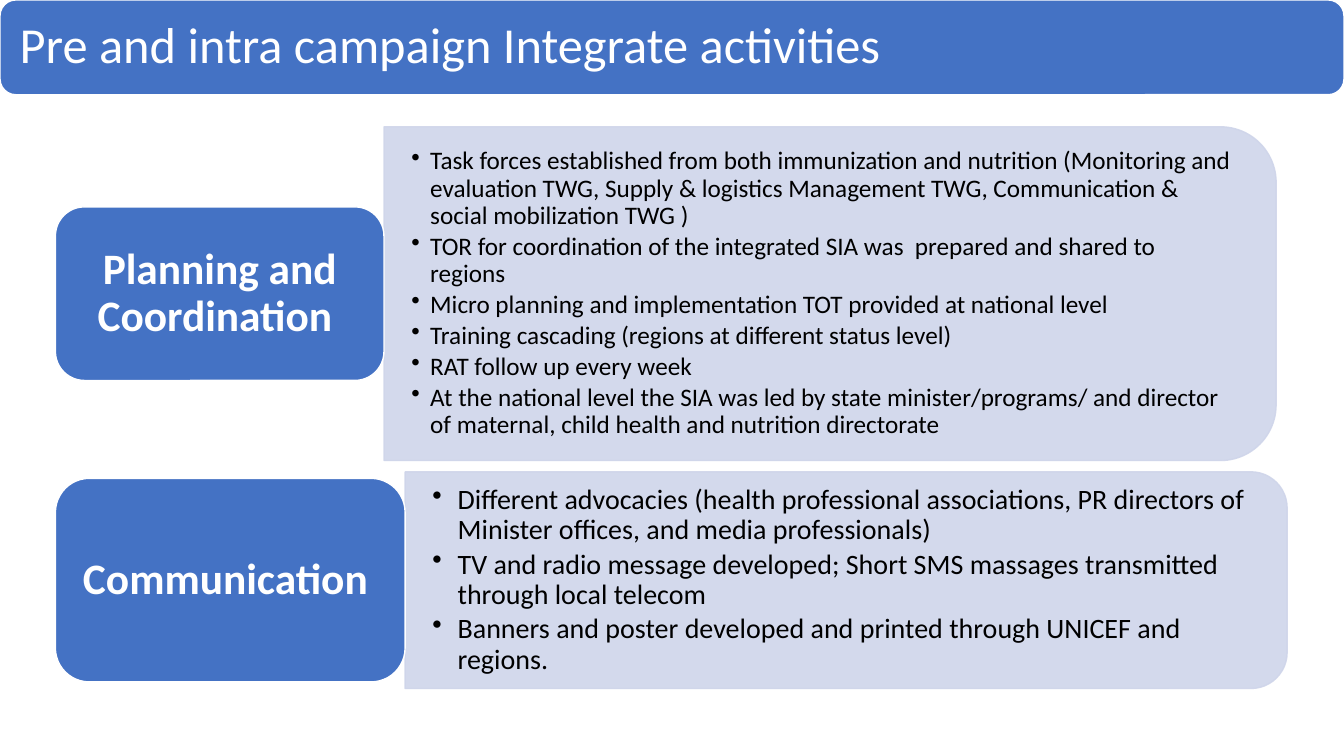
import pptx
import pptx.dml.color
import pptx.enum.shapes
import pptx.enum.text
import pptx.oxml.ns
import pptx.util
from lxml import etree

Pt = pptx.util.Pt
SHAPES = pptx.enum.shapes.MSO_SHAPE
ALIGN = pptx.enum.text.PP_ALIGN
COLORS = {"blue": "4472C4", "pale": "CFD5EA", "white": "FFFFFF", "black": "000000"}
FONT = "Calibri"
CORNER_INSET = 0.0488
LABEL_LEFT = 39.6

SECTIONS = [
    {
        "label": "Planning and Coordination ",
        "label_height": 124,
        "panel": (274.3, 90.6, 637.2, 238.4),
        "size": 18,
        "indent": 13.5,
        "items": [
            "Task forces established from both immunization and nutrition (Monitoring and evaluation TWG, "
            "Supply & logistics Management TWG, Communication & social mobilization TWG )",
            "TOR for coordination of the integrated SIA was  prepared and shared to regions",
            "Micro planning and implementation TOT provided at national level",
            "Training cascading (regions at different status level)",
            "RAT follow up every week",
            "At the national level the SIA was led by state minister/programs/ and director of maternal, "
            "child health and nutrition directorate",
        ],
    },
    {
        "label": "Communication ",
        "label_height": 145.4,
        "panel": (289.4, 337, 630, 154.8),
        "size": 20,
        "indent": 18,
        "items": [
            "Different advocacies (health professional associations, PR directors of Minister offices, "
            "and media professionals)",
            "TV and radio message developed; Short SMS massages transmitted through local telecom",
            "Banners and poster developed and printed through UNICEF and regions.",
        ],
    },
]


def rgb(name):
    """Return the named palette colour."""
    return pptx.dml.color.RGBColor.from_string(COLORS[name])


def write_text(shape, texts, size, color, margins, bold=False, align=ALIGN.LEFT, indent=0):
    """Fill a shape with paragraphs, bulleted when an indent is given."""
    frame = shape.text_frame
    frame.word_wrap = True
    frame.vertical_anchor = pptx.enum.text.MSO_ANCHOR.MIDDLE
    frame.margin_left = frame.margin_right = Pt(margins[0])
    frame.margin_top = frame.margin_bottom = Pt(margins[1])
    for index, text in enumerate(texts):
        paragraph = frame.paragraphs[0] if index == 0 else frame.add_paragraph()
        paragraph.text = text
        paragraph.alignment = align
        paragraph.line_spacing = 0.9
        if indent:
            paragraph.space_after = Pt(0.15 * size)
            properties = paragraph._p.get_or_add_pPr()
            properties.set("marL", str(Pt(indent)))
            properties.set("indent", str(-Pt(indent)))
            bullet = etree.SubElement(properties, pptx.oxml.ns.qn("a:buChar"))
            bullet.set("char", "•")
        font = paragraph.runs[0].font
        font.name, font.size, font.bold = FONT, Pt(size), bold
        font.color.rgb = rgb(color)


def add_block(slide, kind, box, fill, line):
    """Add a filled preset shape with a thin outline and no shadow."""
    shape = slide.shapes.add_shape(kind, *map(Pt, box))
    shape.shadow.inherit = False
    shape.fill.solid()
    shape.fill.fore_color.rgb = rgb(fill)
    shape.line.color.rgb = rgb(line)
    shape.line.width = Pt(1)
    return shape


def add_title(slide, box, text):
    """Add the title bar."""
    bar = add_block(slide, SHAPES.ROUNDED_RECTANGLE, box, "blue", "white")
    write_text(bar, [text], 36, "white", (10.8, 10.8))


def add_panel(slide, box, items, size, indent):
    """Add a translucent panel rounded on the right, with its bullet list."""
    left, top, width, height = box
    turned = (left + (width - height) / 2, top + (height - width) / 2, height, width)
    panel = add_block(slide, SHAPES.ROUND_2_SAME_RECTANGLE, turned, "pale", "pale")
    panel.rotation = 90
    for color in panel._element.spPr.iter(pptx.oxml.ns.qn("a:srgbClr")):
        etree.SubElement(color, pptx.oxml.ns.qn("a:alpha")).set("val", "90000")
    inset = CORNER_INSET * height
    text_box = slide.shapes.add_textbox(
        Pt(left), Pt(top + inset), Pt(width - inset), Pt(height - 2 * inset)
    )
    write_text(text_box, items, size, "black", (19.5, 9.75), indent=indent)


def add_section(slide, section):
    """Add a panel and the label centred against its left side."""
    left, top, width, height = section["panel"]
    add_panel(slide, section["panel"], section["items"], section["size"], section["indent"])
    label_height = section["label_height"]
    label_box = (LABEL_LEFT, top + (height - label_height) / 2, left - LABEL_LEFT, label_height)
    label = add_block(slide, SHAPES.ROUNDED_RECTANGLE, label_box, "blue", "white")
    write_text(label, [section["label"]], 31, "white", (9.3, 4.65), bold=True, align=ALIGN.CENTER)


def main():
    """Build and save the presentation."""
    presentation = pptx.Presentation()
    presentation.slide_width, presentation.slide_height = Pt(960), Pt(540)
    slide = presentation.slides.add_slide(presentation.slide_layouts[6])
    add_title(slide, (0, 0, 960, 67.7), "Pre and intra campaign Integrate activities")
    for section in SECTIONS:
        add_section(slide, section)
    presentation.save("out.pptx")


if __name__ == "__main__":
    main()
